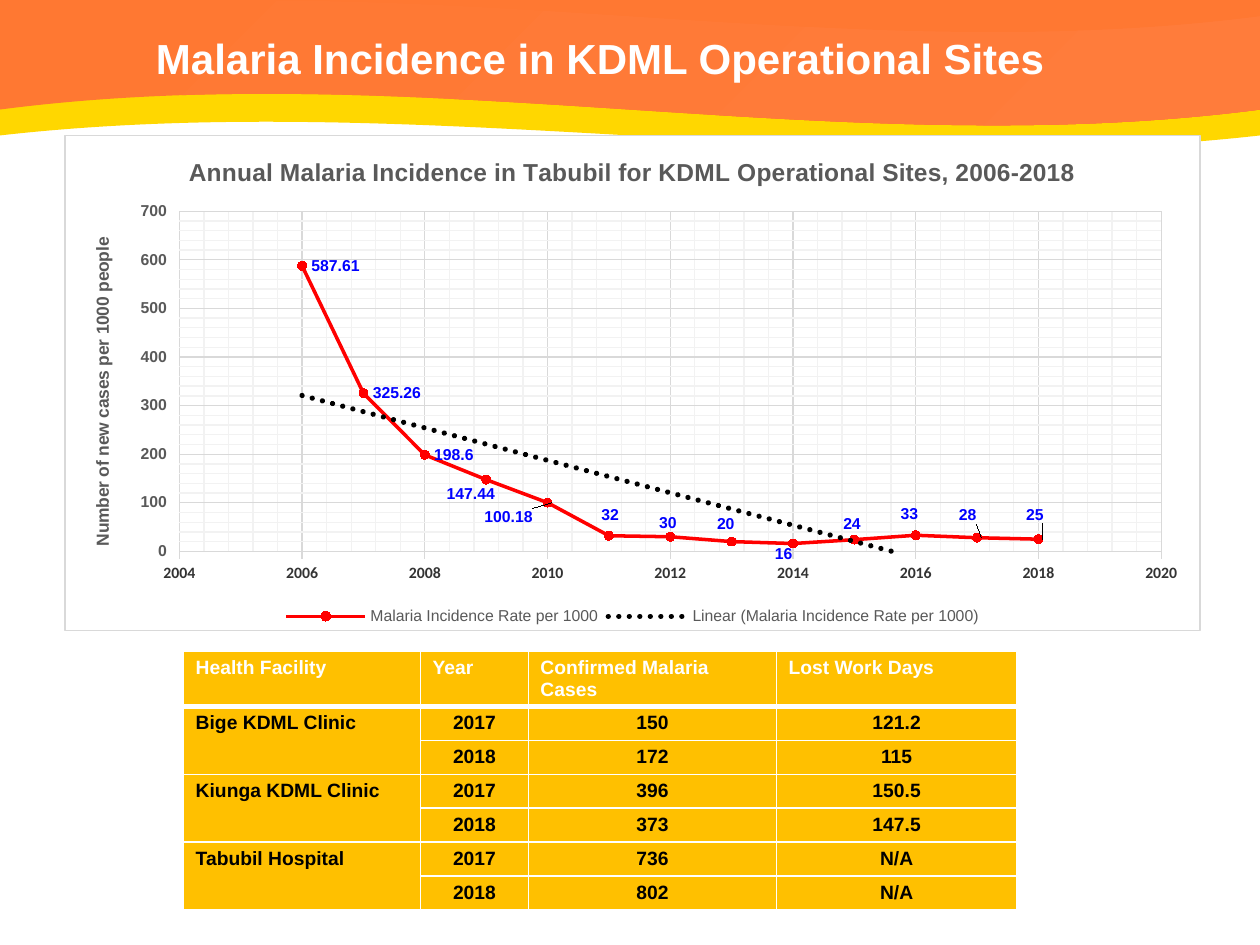
from dataclasses import dataclass

import pptx
import pptx.chart.data
import pptx.dml.color
import pptx.enum.chart
import pptx.enum.shapes
import pptx.enum.text
import pptx.oxml
import pptx.oxml.ns
import pptx.util

Pt = pptx.util.Pt
NS = pptx.oxml.ns.nsdecls("c", "a")


@dataclass(frozen=True)
class Theme:
    orange: str = "FF7832"
    light_orange: str = "FF7C3B"
    yellow: str = "FFD700"
    amber: str = "FFC000"
    white: str = "FFFFFF"
    black: str = "000000"
    red: str = "FF0000"
    blue: str = "0000FF"
    grey: str = "595959"
    dark_grey: str = "333333"
    grid: str = "D9D9D9"
    minor_grid: str = "F2F2F2"
    font: str = "Arial"
    axis_font: str = "Calibri"
    heading: float = 24
    chart_title: float = 14
    table: float = 11
    axis_title: float = 10
    small: float = 9


THEME = Theme()

CHART_BOX = (36.7, 77, 649.4, 283.7)
PLOT_BOX = (65.5, 43.5, 561.7, 194.9)  # measured inside the chart
RATES = [587.61, 325.26, 198.6, 147.44, 100.18, 32, 30, 20, 16, 24, 33, 28, 25]
# Shift of each label away from the right of its marker, in points
LABEL_SHIFTS = {
    3: (-28, 8.5), 4: (-41.5, 8.5), 5: (-9.7, -12), 6: (-11.7, -7.5),
    7: (-13.7, -10), 8: (-15.7, 6), 9: (-11.7, -9), 10: (-14, -12),
    11: (-15.7, -13), 12: (-12.5, -14),
}
HEADINGS = ["Health Facility", "Year", "Confirmed Malaria Cases", "Lost Work Days"]
FACILITIES = {
    "Bige KDML Clinic": [("2017", "150", "121.2"), ("2018", "172", "115")],
    "Kiunga KDML Clinic": [("2017", "396", "150.5"), ("2018", "373", "147.5")],
    "Tabubil Hospital": [("2017", "736", "N/A"), ("2018", "802", "N/A")],
}


def rgb(value):
    return pptx.dml.color.RGBColor.from_string(value)


def style_font(font, size, color, bold=False, name=THEME.font):
    font.size, font.bold, font.name = Pt(size), bold, name
    font.color.rgb = rgb(color)


def write_text(frame, text, size, color, bold=True, align=None):
    paragraph = frame.paragraphs[0]
    paragraph.alignment = align
    run = paragraph.add_run()
    run.text = text
    style_font(run.font, size, color, bold)


def style_line(line, color, width):
    line.color.rgb = rgb(color)
    line.width = Pt(width)


def line_xml(tag, color, width):
    return (f'<a:{tag} {NS} w="{Pt(width)}"><a:solidFill><a:srgbClr val="{color}"/>'
            f'</a:solidFill></a:{tag}>')


def add_band(slide, kind, top, height, color, end_color=None):
    band = slide.shapes.add_shape(kind, 0, Pt(top), Pt(720), Pt(height))
    band.shadow.inherit = False
    band.line.fill.background()
    if kind == pptx.enum.shapes.MSO_SHAPE.WAVE:
        band.adjustments[0], band.adjustments[1] = 0.13, 0
    if end_color:
        band.fill.gradient()
        band.fill.gradient_angle = 315
        for stop, shade in zip(band.fill.gradient_stops, (color, end_color)):
            stop.color.rgb = rgb(shade)
    else:
        band.fill.solid()
        band.fill.fore_color.rgb = rgb(color)


def add_heading(slide, text):
    heading = slide.shapes.add_textbox(Pt(82), Pt(11.5), Pt(602), Pt(42.5))
    frame = heading.text_frame
    frame.word_wrap = True
    frame.vertical_anchor = pptx.enum.text.MSO_ANCHOR.MIDDLE
    write_text(frame, text, THEME.heading, THEME.white)


def layout_xml(box, inner=False):
    """Manual layout for lengths in points, as shares of the chart's size."""
    sizes = CHART_BOX[2:] * 2
    parts = "".join(f'<c:{tag} val="{length / size:.4f}"/>'
                    for tag, length, size in zip("xywh", box, sizes))
    modes = ('<c:layoutTarget val="inner"/><c:xMode val="edge"/>'
             '<c:yMode val="edge"/>') if inner else ""
    return pptx.oxml.parse_xml(
        f"<c:layout {NS}><c:manualLayout>{modes}{parts}</c:manualLayout></c:layout>")


def style_axis(axis, low, high, major, color, font):
    axis.minimum_scale, axis.maximum_scale = low, high
    axis.major_unit, axis.minor_unit = major, major / 5
    axis.has_major_gridlines = axis.has_minor_gridlines = True
    style_line(axis.major_gridlines.format.line, THEME.grid, 0.75)
    axis.major_tick_mark = pptx.enum.chart.XL_TICK_MARK.OUTSIDE
    axis.tick_labels.number_format = "General"
    axis.tick_labels.number_format_is_linked = False
    style_font(axis.tick_labels.font, THEME.small, color, True, font)


def style_rates(chart):
    rates = chart.plots[0].series[0]
    rates.smooth = True
    style_line(rates.format.line, THEME.red, 2)
    marker = rates.marker
    marker.style = pptx.enum.chart.XL_MARKER_STYLE.CIRCLE
    marker.size = 5
    marker.format.fill.solid()
    marker.format.fill.fore_color.rgb = rgb(THEME.red)
    style_line(marker.format.line, THEME.red, 0.75)

    # Value labels
    for index in range(len(RATES)):
        label = rates.points[index].data_label
        style_font(label.font, THEME.small, THEME.blue, True)
        label.position = pptx.enum.chart.XL_LABEL_POSITION.RIGHT
    for label in chart.element.xpath(".//c:dLbl"):
        index = int(label.xpath("./c:idx/@val")[0])
        if index in LABEL_SHIFTS:
            label.insert(1, layout_xml(LABEL_SHIFTS[index]))

    # Linear trend
    chart.element.xpath(".//c:ser/c:xVal")[0].addprevious(pptx.oxml.parse_xml(
        f'<c:trendline {NS}><c:spPr><a:ln w="{Pt(3)}" cap="rnd"><a:solidFill>'
        f'<a:srgbClr val="{THEME.black}"/></a:solidFill><a:prstDash val="sysDot"/>'
        '</a:ln></c:spPr><c:trendlineType val="linear"/><c:dispRSqr val="0"/>'
        '<c:dispEq val="0"/></c:trendline>'))


def add_incidence_chart(slide):
    data = pptx.chart.data.XyChartData()
    points = data.add_series("Malaria Incidence Rate per 1000")
    for year, rate in enumerate(RATES, start=2006):
        points.add_data_point(year, rate)
    chart = slide.shapes.add_chart(
        pptx.enum.chart.XL_CHART_TYPE.XY_SCATTER_SMOOTH,
        *map(Pt, CHART_BOX), data).chart
    style_font(chart.font, THEME.axis_title, THEME.black)
    chart.plots[0].vary_by_categories = False

    # Titles and legend
    chart.has_title = True
    write_text(chart.chart_title.text_frame,
               "Annual Malaria Incidence in Tabubil for KDML Operational Sites, 2006-2018",
               THEME.chart_title, THEME.grey)
    chart.has_legend = True
    chart.legend.position = pptx.enum.chart.XL_LEGEND_POSITION.BOTTOM
    chart.legend.include_in_layout = False
    style_font(chart.legend.font, THEME.small, THEME.grey)

    # Axes
    years, cases = chart.category_axis, chart.value_axis
    style_axis(years, 2004, 2020, 2, THEME.dark_grey, THEME.axis_font)
    style_line(years.format.line, THEME.grid, 0.75)
    style_axis(cases, 0, 700, 100, THEME.grey, THEME.font)
    cases.format.line.fill.background()
    write_text(cases.axis_title.text_frame, "Number of new cases per 1000 people",
               THEME.axis_title, THEME.grey)
    for gridlines in chart.element.xpath(".//c:minorGridlines"):
        gridlines.append(pptx.oxml.parse_xml(
            f'<c:spPr {NS}>{line_xml("ln", THEME.minor_grid, 0.75)}</c:spPr>'))
    style_rates(chart)

    # Plot position, chart background and border
    plot_area = chart.element.xpath(".//c:plotArea")[0]
    for old in plot_area.xpath("./c:layout"):
        plot_area.remove(old)
    plot_area.insert(0, layout_xml(PLOT_BOX, inner=True))
    chart.element.xpath("./c:chart")[0].addnext(pptx.oxml.parse_xml(
        f'<c:spPr {NS}><a:solidFill><a:srgbClr val="{THEME.white}"/></a:solidFill>'
        f'{line_xml("ln", THEME.grid, 0.75)}</c:spPr>'))


def fill_cell(cell, text, color, align=None, bottom=1):
    cell.margin_left = cell.margin_right = Pt(6.86)
    cell.margin_top = cell.margin_bottom = Pt(3.4)
    cell.fill.solid()
    cell.fill.fore_color.rgb = rgb(THEME.amber)
    if text:
        write_text(cell.text_frame, text, THEME.table, color, align=align)
    borders = {"lnL": 1, "lnR": 1, "lnT": 1, "lnB": bottom}
    for place, (side, width) in enumerate(borders.items()):
        cell._tc.get_or_add_tcPr().insert(
            place, pptx.oxml.parse_xml(line_xml(side, THEME.white, width)))


def add_facility_table(slide):
    table = slide.shapes.add_table(7, 4, Pt(105), Pt(372.4), Pt(476), Pt(148)).table
    for column, width in zip(table.columns, (135.3, 61.7, 141.8, 137.2)):
        column.width = Pt(width)
    for row, height in zip(table.rows, [31] + [19.4] * 6):
        row.height = Pt(height)
    for column, text in enumerate(HEADINGS):
        fill_cell(table.cell(0, column), text, THEME.white, bottom=3)
    for group, (facility, records) in enumerate(FACILITIES.items()):
        first = 1 + 2 * group
        table.cell(first, 0).merge(table.cell(first + 1, 0))
        for offset, record in enumerate(records):
            fill_cell(table.cell(first + offset, 0), "" if offset else facility, THEME.black)
            for column, text in enumerate(record, start=1):
                fill_cell(table.cell(first + offset, column), text, THEME.black,
                          align=pptx.enum.text.PP_ALIGN.CENTER)


def main():
    deck = pptx.Presentation()
    deck.slide_width, deck.slide_height = Pt(720), Pt(540)
    slide = deck.slides.add_slide(deck.slide_layouts[6])
    shapes = pptx.enum.shapes.MSO_SHAPE
    # Header bands
    add_band(slide, shapes.FLOWCHART_PROCESS, 0, 68.4, THEME.orange)
    add_band(slide, shapes.WAVE, 23, 62.6, THEME.yellow)
    add_band(slide, shapes.WAVE, 0, 72, THEME.orange, THEME.light_orange)
    # Content
    add_incidence_chart(slide)
    add_facility_table(slide)
    add_heading(slide, "Malaria Incidence in KDML Operational Sites")
    deck.save("out.pptx")


if __name__ == "__main__":
    main()
